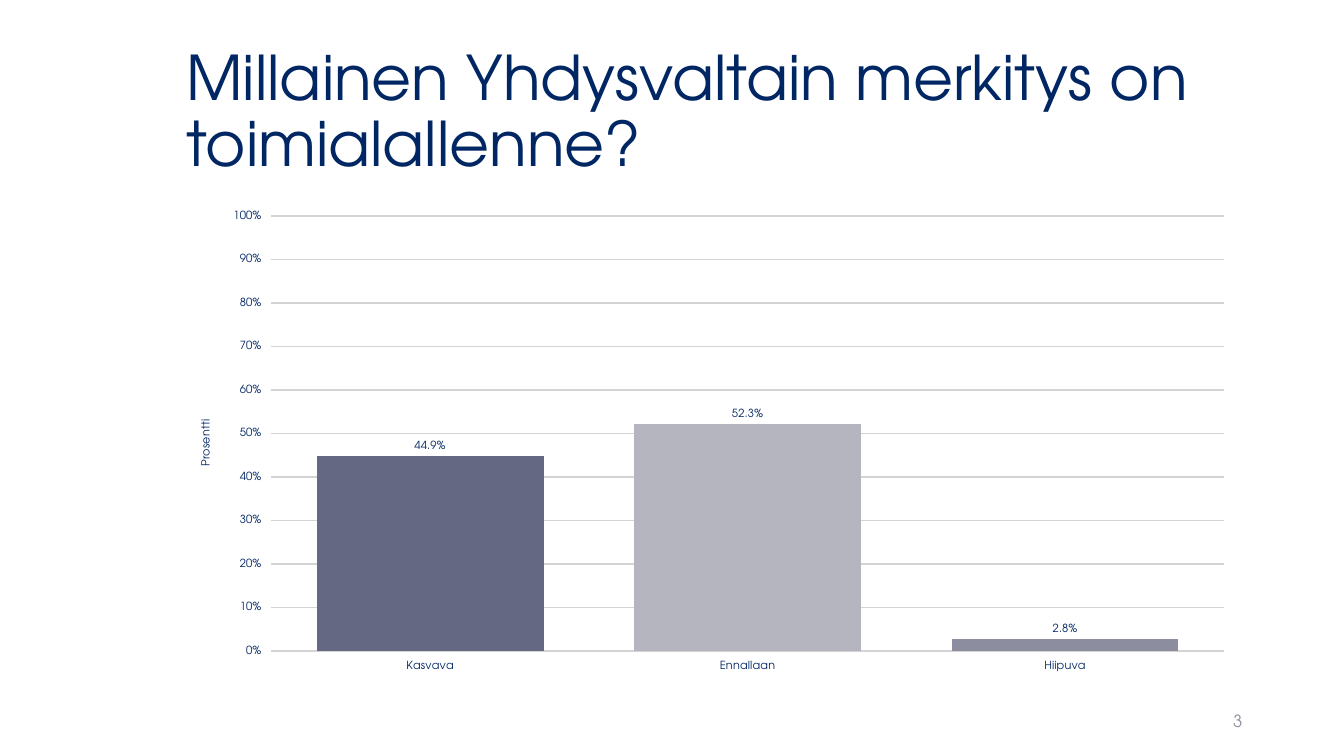
import dataclasses

import pptx
import pptx.chart.data
import pptx.dml.color
import pptx.enum.chart
import pptx.enum.text
import pptx.oxml
import pptx.oxml.ns
import pptx.util


@dataclasses.dataclass(frozen=True)
class Theme:
    """Colours, font and type sizes of the deck."""
    font: str = "TeX Gyre Adventor"
    ink: str = "002663"
    muted: str = "8C8E9F"
    grid: str = "D3D3D3"
    bars: tuple = ("646883", "B4B5BF", "8C8E9F")
    head: int = 44
    body: int = 18
    foot: int = 12
    label: int = 8


THEME = Theme()
WIDE, HIGH = 13.33, 7.5
ANSWERS = {"Kasvava": 0.449, "Ennallaan": 0.523, "Hiipuva": 0.028}


def share(left, top, width, height):
    """Turn shares of the slide into a box of lengths."""
    pairs = ((left, WIDE), (top, HIGH), (width, WIDE), (height, HIGH))
    return [pptx.util.Inches(round(part * full, 2)) for part, full in pairs]


def tint(code):
    """Return a colour for a hex code."""
    return pptx.dml.color.RGBColor.from_string(code)


def style(font, size, code=THEME.ink):
    """Set the face, size and colour of a font."""
    font.name = THEME.font
    font.size = pptx.util.Pt(size)
    font.bold = False
    font.color.rgb = tint(code)


def write(slide, box, text, size, code, align, lead=1.0):
    """Place one line of styled text, centred in height, in a box."""
    frame = slide.shapes.add_textbox(*box).text_frame
    frame.word_wrap = True
    frame.vertical_anchor = pptx.enum.text.MSO_ANCHOR.MIDDLE
    line = frame.paragraphs[0]
    line.alignment = align
    line.line_spacing = lead
    run = line.add_run()
    run.text = text
    style(run.font, size, code)


def pin(parent, index, inner=False, **spots):
    """Fix a chart part at shares of the chart's size."""
    space = pptx.oxml.ns.nsdecls("c")
    target = '<c:layoutTarget val="inner"/>' if inner else ""
    modes = "".join(f'<c:{side}Mode val="edge"/>' for side in "xy")
    sizes = "".join(f'<c:{key} val="{spot}"/>' for key, spot in spots.items())
    old = parent.find(pptx.oxml.ns.qn("c:layout"))
    if old is not None:
        parent.remove(old)
    parent.insert(index, pptx.oxml.parse_xml(
        f"<c:layout {space}><c:manualLayout>{target}{modes}{sizes}"
        "</c:manualLayout></c:layout>"))


def scale(axis):
    """Set up the percent axis with its grid and title."""
    axis.minimum_scale, axis.maximum_scale = 0, 1
    axis.major_unit = 0.1
    axis.tick_labels.number_format = "0%"
    axis.tick_labels.number_format_is_linked = False
    axis.has_major_gridlines = True
    grid = axis.major_gridlines.format.line
    grid.color.rgb = tint(THEME.grid)
    grid.width = pptx.util.Pt(1)
    run = axis.axis_title.text_frame.paragraphs[0].add_run()
    run.text = "Prosentti"
    style(run.font, THEME.label)
    pin(axis.axis_title._element, 1, x=0.02, y=0.45)


def paint(plot):
    """Colour the bars and label their values."""
    plot.gap_width, plot.overlap = 40, -2
    plot.vary_by_categories = False
    for index, code in enumerate(THEME.bars):
        fill = plot.series[0].points[index].format.fill
        fill.solid()
        fill.fore_color.rgb = tint(code)
    plot.has_data_labels = True
    labels = plot.data_labels
    labels.show_value = True
    labels.number_format = "0.0%"
    labels.number_format_is_linked = False
    labels.position = pptx.enum.chart.XL_LABEL_POSITION.OUTSIDE_END
    style(labels.font, THEME.label)


def graph(slide, box, values):
    """Draw the column chart of answers in a box."""
    data = pptx.chart.data.CategoryChartData()
    data.categories = list(values)
    data.add_series("Series 1", list(values.values()))
    kind = pptx.enum.chart.XL_CHART_TYPE.COLUMN_CLUSTERED
    chart = slide.shapes.add_chart(kind, *box, data).chart
    chart.has_legend = False
    chart.has_title = False
    style(chart.font, THEME.body)
    for axis in (chart.category_axis, chart.value_axis):
        axis.format.line.fill.background()
        axis.major_tick_mark = pptx.enum.chart.XL_TICK_MARK.OUTSIDE
        style(axis.tick_labels.font, THEME.label)
    scale(chart.value_axis)
    paint(chart.plots[0])
    area = chart._chartSpace.chart.plotArea
    pin(area, 0, inner=True, x=0.089, y=0.03, w=0.892, h=0.907)


def poll(deck, title, values, number):
    """Add a slide with a question, its chart and a page number."""
    slide = deck.slides.add_slide(deck.slide_layouts[6])
    side = pptx.enum.text.PP_ALIGN
    left, width = 0.1313, 0.7945
    write(slide, share(left, 0.0533, width, 0.1933), title,
          THEME.head, THEME.ink, side.LEFT, 0.9)
    write(slide, share(0.7067, 0.9267, 0.225, 0.0533), number,
          THEME.foot, THEME.muted, side.RIGHT)
    graph(slide, share(left, 0.2667, width, 0.6347), values)


def main():
    """Build and save the deck."""
    deck = pptx.Presentation()
    deck.slide_width = pptx.util.Inches(WIDE)
    deck.slide_height = pptx.util.Inches(HIGH)
    poll(deck, "Millainen Yhdysvaltain merkitys on toimialallenne?",
         ANSWERS, "3")
    deck.save("out.pptx")


if __name__ == "__main__":
    main()
